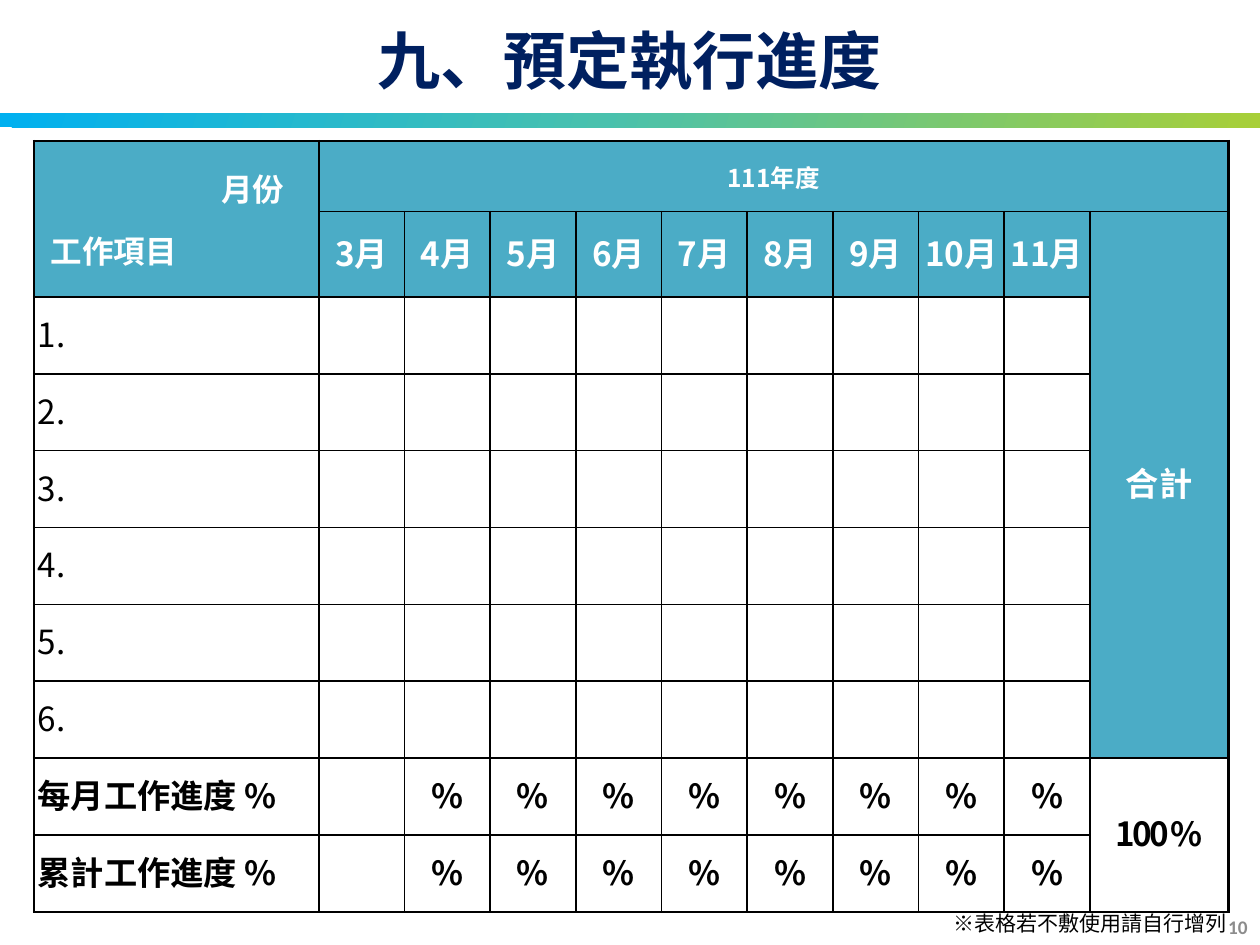
from copy import deepcopy
from dataclasses import dataclass

from lxml import etree
from pptx import Presentation
from pptx.dml.color import RGBColor
from pptx.enum.shapes import MSO_SHAPE
from pptx.enum.text import MSO_ANCHOR, PP_ALIGN
from pptx.oxml.ns import qn
from pptx.util import Inches, Pt

RECTANGLE = MSO_SHAPE.RECTANGLE
TOP, MIDDLE = MSO_ANCHOR.TOP, MSO_ANCHOR.MIDDLE
LEFT, CENTER, RIGHT = PP_ALIGN.LEFT, PP_ALIGN.CENTER, PP_ALIGN.RIGHT
JUSTIFY = PP_ALIGN.JUSTIFY

CJK = "Noto Sans CJK SC"
COLORS = {
    "sky": "00B0F0", "teal": "49C1AD", "lime": "A8CF38", "navy": "002060",
    "grey": "8C8C8C", "header": "4BACC6", "white": "FFFFFF", "black": "000000",
}
ROW_HEIGHTS = [0.56, 0.6] + [0.61] * 8
COL_WIDTHS = [2.26] + [0.68] * 9 + [1.1]
LAST_ROW, LAST_COL = len(ROW_HEIGHTS) - 1, len(COL_WIDTHS) - 1
TIGHT = (0.03, 0.01, 0.03, 0)
ROOMY = (0.13, 0.07, 0.13, 0.07)


@dataclass
class Style:
    size: float
    color: str = "black"
    bold: bool = True
    align: PP_ALIGN = CENTER
    font: str = CJK
    line_spacing: float | None = None
    space_after: float | None = None
    tracking: float = 0


@dataclass
class Label:
    text: str
    box: tuple[float, float, float, float]
    style: Style
    anchor: MSO_ANCHOR = TOP


@dataclass
class Entry:
    row: int
    col: int
    text: str
    style: Style
    insets: tuple[float, float, float, float] = TIGHT


def rgb(name: str) -> RGBColor:
    return RGBColor.from_string(COLORS[name])


def write(tf, text: str, style: Style) -> None:
    p = tf.paragraphs[0]
    p.add_run().text = text
    p.alignment = style.align
    if style.line_spacing:
        p.line_spacing = Pt(style.line_spacing)
    if style.space_after:
        p.space_after = Pt(style.space_after)
    p.font.size = Pt(style.size)
    p.font.bold = style.bold
    p.font.name = style.font
    p.font.color.rgb = rgb(style.color)
    props = p._p.pPr.find(qn("a:defRPr"))
    etree.SubElement(props, qn("a:ea")).set("typeface", style.font)
    if style.tracking:
        props.set("spc", str(int(style.tracking * 100)))


def add_label(slide, label: Label) -> None:
    sp = slide.shapes.add_textbox(*map(Inches, label.box))
    tf = sp.text_frame
    tf.word_wrap = True
    tf.vertical_anchor = label.anchor
    write(tf, label.text, label.style)


def add_band(slide) -> None:
    sp = slide.shapes.add_shape(RECTANGLE, 0, Inches(0.9), Inches(10), Inches(0.11))
    sp.shadow.inherit = False
    sp.line.fill.background()
    sp.fill.gradient()
    sp.fill.gradient_angle = 342
    stops = next(sp._element.iter(qn("a:gsLst")))
    stops.append(deepcopy(stops[-1]))
    ramp = ((0, "sky"), (0.48, "teal"), (1, "lime"))
    for stop, (position, color) in zip(sp.fill.gradient_stops, ramp):
        stop.position = position
        stop.color.rgb = rgb(color)


def add_border(cell, side: str, width: float) -> None:
    ln = etree.SubElement(cell._tc.get_or_add_tcPr(), qn(f"a:ln{side}"))
    ln.set("w", str(Pt(width)))
    fill = etree.SubElement(ln, qn("a:solidFill"))
    etree.SubElement(fill, qn("a:srgbClr")).set("val", COLORS["black"])


def format_cell(cell, row: int, col: int) -> None:
    bottom = row + cell.span_height - 1 if cell.is_merge_origin else row
    right = col + cell.span_width - 1 if cell.is_merge_origin else col
    outer = {"L": col == 0, "R": right == LAST_COL, "T": row == 0, "B": bottom == LAST_ROW}
    for side, is_outer in outer.items():
        add_border(cell, side, 1.5 if is_outer else 1)
    if row < 2:
        cell.fill.solid()
        cell.fill.fore_color.rgb = rgb("header")
    else:
        cell.fill.background()


def schedule_entries() -> list[Entry]:
    head = Style(19, "white", line_spacing=24)
    item = Style(19, bold=False, align=LEFT, line_spacing=24)
    progress = Style(19, align=JUSTIFY, line_spacing=24)
    percent = Style(19, line_spacing=24)
    total = Style(19, line_spacing=24, tracking=-1.5)
    entries = [
        Entry(0, 1, "111年度", Style(14, "white"), (0.1, 0.05, 0.1, 0.05)),
        Entry(1, LAST_COL, "合計", head, ROOMY),
        Entry(8, LAST_COL, "100 %", total, ROOMY),
    ]
    entries += [Entry(1, month - 2, f"{month}月", head) for month in range(3, 12)]
    entries += [Entry(n + 1, 0, f"{n}.", item) for n in range(1, 7)]
    for row, name in ((8, "每月"), (9, "累計")):
        entries.append(Entry(row, 0, f"{name}工作進度 %", progress))
        entries += [Entry(row, col, "%", percent) for col in range(2, LAST_COL)]
    return entries


def add_schedule(slide) -> None:
    frame = slide.shapes.add_table(
        len(ROW_HEIGHTS), len(COL_WIDTHS), Inches(0.27), Inches(1.12),
        Inches(sum(COL_WIDTHS)), Inches(sum(ROW_HEIGHTS)))
    table = frame.table
    table.first_row = table.horz_banding = False
    for row, height in zip(table.rows, ROW_HEIGHTS):
        row.height = Inches(height)
    for column, width in zip(table.columns, COL_WIDTHS):
        column.width = Inches(width)
    for first, last in (((0, 0), (1, 0)), ((0, 1), (0, LAST_COL)),
                        ((1, LAST_COL), (7, LAST_COL)), ((8, LAST_COL), (9, LAST_COL))):
        table.cell(*first).merge(table.cell(*last))
    for row in range(len(ROW_HEIGHTS)):
        for col in range(len(COL_WIDTHS)):
            cell = table.cell(row, col)
            if not cell.is_spanned:
                format_cell(cell, row, col)
    for entry in schedule_entries():
        cell = table.cell(entry.row, entry.col)
        cell.vertical_anchor = MIDDLE
        (cell.margin_left, cell.margin_top,
         cell.margin_right, cell.margin_bottom) = map(Inches, entry.insets)
        write(cell.text_frame, entry.text, entry.style)


def main() -> None:
    prs = Presentation()
    prs.slide_width, prs.slide_height = Inches(10), Inches(7.5)
    slide = prs.slides.add_slide(prs.slide_layouts[6])
    add_band(slide)
    number = Style(11, "grey", align=RIGHT, font="Calibri", space_after=6)
    add_label(slide, Label("九、預定執行進度", (0, 0, 10, 0.94), Style(36, "navy"), MIDDLE))
    add_label(slide, Label("10", (7.67, 7.16, 2.33, 0.4), number, MIDDLE))
    add_schedule(slide)
    for label in (
        Label(" 月份", (1.6, 1.3, 0.86, 0.4), Style(18, "white", align=LEFT)),
        Label(" 工作項目", (0.15, 1.79, 1.45, 0.4), Style(18, "white")),
        Label("※表格若不敷使用請自行增列", (7.39, 7.18, 2.52, 0.3), Style(12, bold=False)),
    ):
        add_label(slide, label)
    prs.save("out.pptx")


if __name__ == "__main__":
    main()
